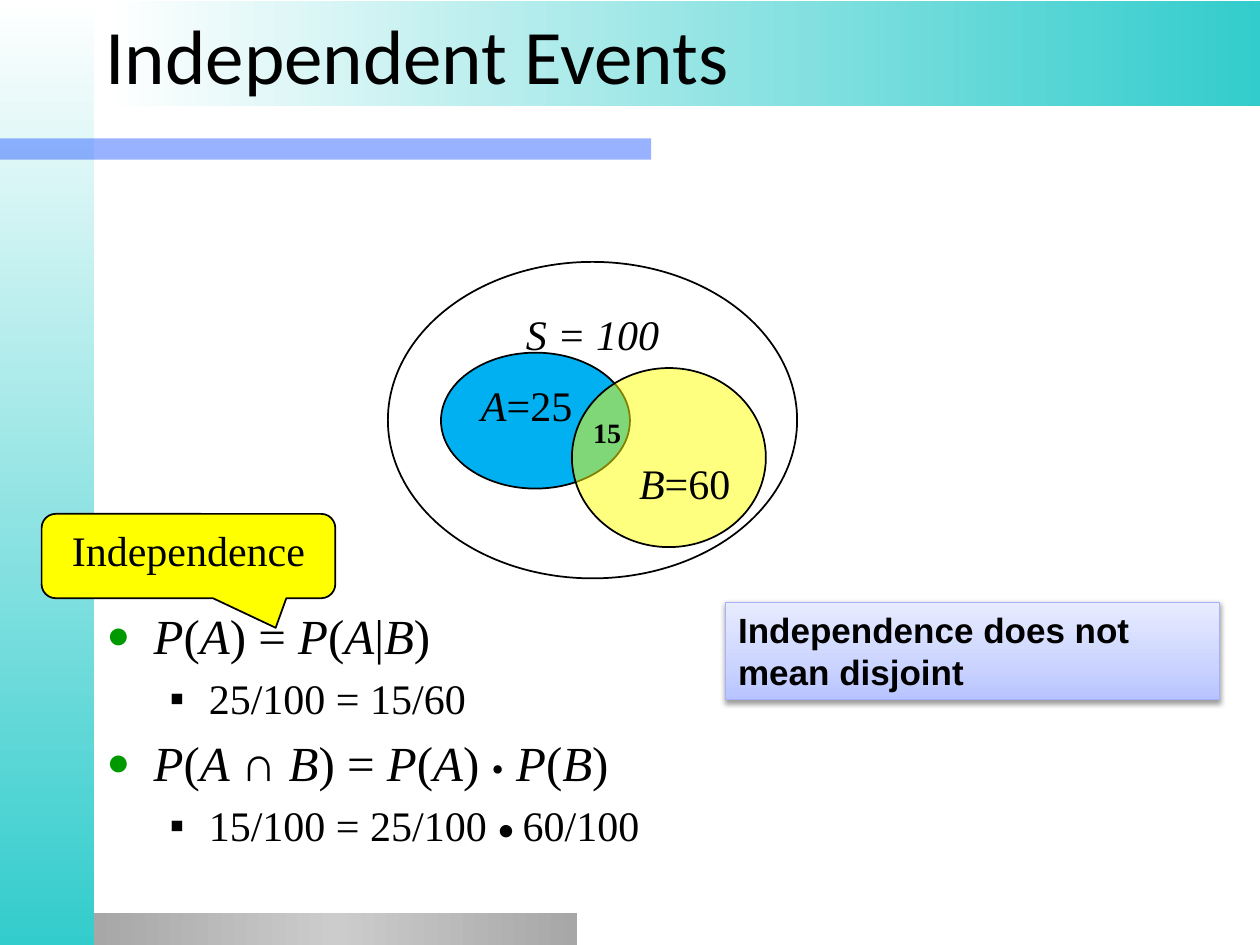
"""Build the Independent Events slide with its Venn diagram and formulas."""
from lxml import etree
from pptx import Presentation
from pptx.dml.color import RGBColor
from pptx.enum.shapes import MSO_SHAPE
from pptx.enum.text import MSO_ANCHOR, PP_ALIGN
from pptx.oxml.ns import qn
from pptx.util import Cm, Pt

RECT, OVAL = MSO_SHAPE.RECTANGLE, MSO_SHAPE.OVAL
CALLOUT = MSO_SHAPE.ROUNDED_RECTANGULAR_CALLOUT
TOP, MIDDLE = MSO_ANCHOR.TOP, MSO_ANCHOR.MIDDLE
LEFT, CENTER = PP_ALIGN.LEFT, PP_ALIGN.CENTER

BLACK = RGBColor(0x00, 0x00, 0x00)
WHITE = RGBColor(0xFF, 0xFF, 0xFF)
TEAL = RGBColor(0x33, 0xCC, 0xCC)
BLUE = RGBColor(0x33, 0x66, 0xFF)
GRAY = RGBColor(0xA7, 0xA7, 0xA7)
SILVER = RGBColor(0xCC, 0xCC, 0xCC)
SKY = RGBColor(0x00, 0xB0, 0xF0)
YELLOW = RGBColor(0xFF, 0xFF, 0x00)
GREEN = RGBColor(0x00, 0x99, 0x00)
NOTE_EDGE = RGBColor(0xA7, 0xB2, 0xFB)
NOTE_STOPS = [(0, RGBColor(0xB7, 0xC4, 0xFF)), (35, RGBColor(0xCB, 0xD4, 0xFF)),
              (100, RGBColor(0xE8, 0xEC, 0xFF))]
TEAL_STOPS = [(0, WHITE), (100, TEAL)]
GRAY_STOPS = [(0, GRAY), (50, SILVER), (100, GRAY)]
SERIF, SANS, HEADING = "Times New Roman", "Arial", "Calibri"

BANDS = [
    ((0, 0, 1.9, 19.05), {"stops": TEAL_STOPS, "angle": 90}),
    ((0, 2.79, 13.13, 0.43), {"color": BLUE, "alpha": 50}),
    ((1.9, 18.41, 9.73, 0.64), {"stops": GRAY_STOPS, "angle": 0}),
    ((2.13, 0.03, 23.27, 2.11), {"stops": TEAL_STOPS, "angle": 0}),
]
TITLE = ("Independent Events", (1.88, 0.03, 23.52, 2.11))
FORMULA_BOX = (1.9, 12.07, 21.6, 6.1)
FORMULAS = [
    (0, [("*P*(*A*) = *P*(*A*|*B*)", 28, SERIF)]),
    (1, [("25/100 = 15/60", 24, SERIF)]),
    (0, [("*P*(*A *∩ *B*) = *P*(*A*) ", 28, SERIF), ("•", 20, SERIF),
         (" *P*(*B*)", 28, SERIF)]),
    (1, [("15/100 = 25/100 ", 24, SERIF), ("• ", 20, HEADING), ("60/100", 24, SERIF)]),
]
LEVELS = [
    {"mark": "●", "left": 0.95, "hang": 0.95, "color": GREEN, "size": 80},
    {"mark": "▪", "left": 2.06, "hang": 0.79, "color": BLACK, "size": 100},
]
VENN = [
    ("*S = 100*", (7.82, 5.28, 8.25, 6.38), {"color": WHITE}, CENTER,
     {"margin_top": 0, "margin_bottom": Cm(1.5), "word_wrap": False}),
    ("*A*=25", (8.89, 7.11, 3.81, 2.74), {"color": SKY}, LEFT, {}),
    ("*B*=60", (11.53, 7.42, 3.91, 3.61), {"color": YELLOW, "alpha": 50}, CENTER,
     {"margin_left": Cm(0.64), "margin_right": 0, "margin_top": Cm(1.14),
      "vertical_anchor": MIDDLE}),
]
OVERLAP = ("15", (11.71, 8.25, 1.55, 0.94))
BUBBLE = ("Independence", (0.84, 10.36, 5.92, 1.7), (0.297, 0.851, 0.167))
NOTE = ("Independence does not mean disjoint", (14.63, 12.14, 9.96, 1.96))

FRAME_FORMAT = {"word_wrap": True, "vertical_anchor": TOP,
                "margin_left": Cm(0.25), "margin_right": Cm(0.25),
                "margin_top": Cm(0.13), "margin_bottom": Cm(0.13)}


def add_xml(parent, tag, **attributes):
    values = {name: str(value) for name, value in attributes.items()}
    return etree.SubElement(parent, qn(tag), values)


def paint(shape, color=None, alpha=None, stops=None, angle=0):
    shape.fill.solid()
    shape.fill.fore_color.rgb = color or WHITE
    solid = shape.element.spPr.find(qn("a:solidFill"))
    if alpha:
        add_xml(solid[0], "a:alpha", val=alpha * 1000)
    if stops:
        gradient = etree.Element(qn("a:gradFill"), rotWithShape="1")
        stop_list = add_xml(gradient, "a:gsLst")
        for position, stop_color in stops:
            stop = add_xml(stop_list, "a:gs", pos=position * 1000)
            add_xml(stop, "a:srgbClr", val=stop_color)
        add_xml(gradient, "a:lin", ang=angle * 60000, scaled=0)
        shape.element.spPr.replace(solid, gradient)


def add_figure(slide, preset, box, fill, edge=None, width=1):
    shape = slide.shapes.add_shape(preset, *map(Cm, box))
    shape.shadow.inherit = False
    paint(shape, **fill)
    if edge is None:
        shape.line.fill.background()
    else:
        shape.line.color.rgb = edge
        shape.line.width = Pt(width)
    return shape


def add_runs(paragraph, marked, size, font, bold=False):
    for index, piece in enumerate(marked.split("*")):
        if piece:
            run = paragraph.add_run()
            run.text = piece
            values = {"size": Pt(size), "name": font, "bold": bold,
                      "italic": index % 2 == 1}
            for name, value in values.items():
                setattr(run.font, name, value)
            run.font.color.rgb = BLACK


def set_frame(shape, **changes):
    for name, value in {**FRAME_FORMAT, **changes}.items():
        setattr(shape.text_frame, name, value)
    return shape.text_frame


def write(shape, marked, size, font, align=LEFT, bold=False, **changes):
    paragraph = set_frame(shape, **changes).paragraphs[0]
    paragraph.alignment = align
    add_runs(paragraph, marked, size, font, bold)


def set_bullet(paragraph, mark, left, hang, color, size):
    properties = paragraph._p.get_or_add_pPr()
    properties.set("marL", str(Cm(left)))
    properties.set("indent", str(-Cm(hang)))
    add_xml(add_xml(properties, "a:spcBef"), "a:spcPct", val=20000)
    add_xml(add_xml(properties, "a:buClr"), "a:srgbClr", val=color)
    add_xml(properties, "a:buSzPct", val=size * 1000)
    add_xml(properties, "a:buFont", typeface=SANS)
    add_xml(properties, "a:buChar", char=mark)


def add_formulas(slide):
    frame = set_frame(slide.shapes.add_textbox(*map(Cm, FORMULA_BOX)))
    for index, (level, pieces) in enumerate(FORMULAS):
        paragraph = frame.add_paragraph() if index else frame.paragraphs[0]
        paragraph.level = level
        set_bullet(paragraph, **LEVELS[level])
        for piece in pieces:
            add_runs(paragraph, *piece)


def add_note(slide):
    text, box = NOTE
    note = add_figure(slide, RECT, box, {"stops": NOTE_STOPS, "angle": 270},
                      NOTE_EDGE, 0.75)
    effects = note.element.spPr.find(qn("a:effectLst"))
    shadow = add_xml(effects, "a:outerShdw", blurRad=Pt(3.1), dist=Pt(1.6),
                     dir=90 * 60000, rotWithShape=0)
    add_xml(add_xml(shadow, "a:srgbClr", val=BLACK), "a:alpha", val=38000)
    write(note, text, 20, SANS, bold=True)


def main():
    deck = Presentation()
    deck.slide_width, deck.slide_height = Cm(25.4), Cm(19.05)
    slide = deck.slides.add_slide(deck.slide_layouts[6])
    for box, fill in BANDS:
        add_figure(slide, RECT, box, fill)
    text, box = TITLE
    title = slide.shapes.add_textbox(*map(Cm, box))
    write(title, text, 44, HEADING, vertical_anchor=MIDDLE)
    add_formulas(slide)
    for text, box, fill, align, changes in VENN:
        region = add_figure(slide, OVAL, box, fill, BLACK)
        write(region, text, 24, SERIF, align, **changes)
    text, box = OVERLAP
    write(slide.shapes.add_textbox(*map(Cm, box)), text, 16, SERIF, bold=True)
    text, box, tail = BUBBLE
    bubble = add_figure(slide, CALLOUT, box, {"color": YELLOW}, BLACK)
    for index, value in enumerate(tail):
        bubble.adjustments[index] = value
    write(bubble, text, 24, SERIF, CENTER)
    add_note(slide)
    deck.save("out.pptx")


if __name__ == "__main__":
    main()
